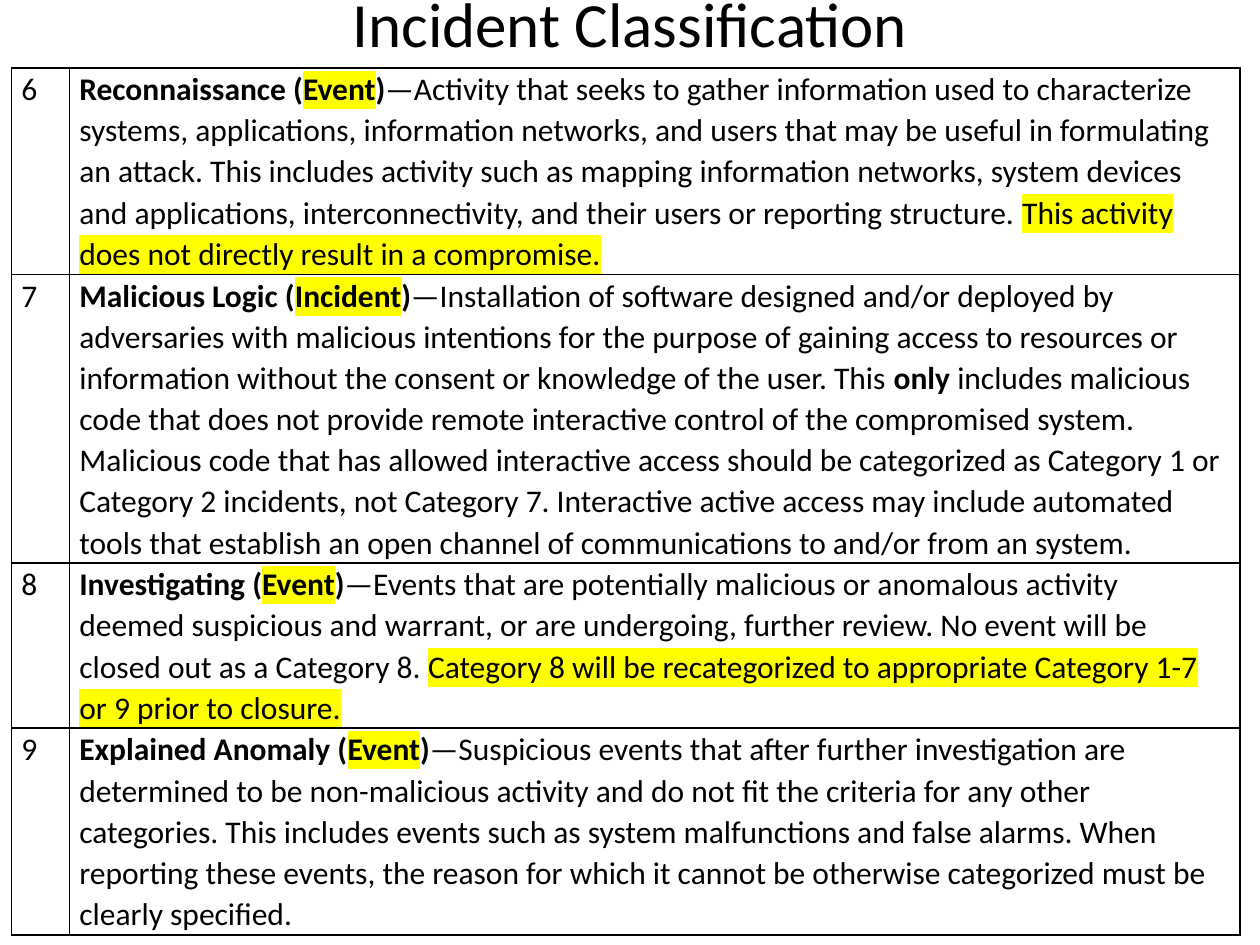
"""Build the incident classification slide."""
from dataclasses import dataclass
from typing import NamedTuple

from lxml import etree
from pptx import Presentation
from pptx import util as u
from pptx.dml.color import RGBColor
from pptx.enum import text
from pptx.oxml.ns import qn


@dataclass(frozen=True)
class Theme:
    """Colours, font and type sizes."""
    ink: str = "000000"
    paper: str = "FFFFFF"
    mark: str = "FFFF00"
    font: str = "Calibri"
    head: int = 36
    body: int = 18
    rule: int = 1


class Run(NamedTuple):
    """A stretch of text with one look."""
    text: str
    bold: bool = False
    mark: bool = False


class Entry(NamedTuple):
    """One category with its kind, its runs and its row height."""
    code: str
    name: str
    kind: str
    runs: list[Run]
    high: float


THEME = Theme()
COLS = (0.46, 9.29)
INSET = {"margin_left": u.Inches(0.08), "margin_right": u.Inches(0.08),
         "margin_top": 0, "margin_bottom": 0}
ENTRIES = [
    Entry("6", "Reconnaissance", "Event", [
        Run("—Activity that seeks to gather information used to characterize systems, "
            "applications, information networks, and users that may be useful in "
            "formulating an attack. This includes activity such as mapping information "
            "networks, system devices and applications, interconnectivity, and their "
            "users or reporting structure. "),
        Run("This activity does not directly result in a compromise.", mark=True)], 1.64),
    Entry("7", "Malicious Logic", "Incident", [
        Run("—Installation of software designed and/or deployed by adversaries with "
            "malicious intentions for the purpose of gaining access to resources or "
            "information without the consent or knowledge of the user. This "),
        Run("only ", bold=True),
        Run("includes malicious code that does not provide remote interactive control "
            "of the compromised system. Malicious code that has allowed interactive "
            "access should be categorized as Category 1 or Category 2 incidents, not "
            "Category 7. Interactive active access may include automated tools that "
            "establish an open channel of communications to and/or from an system.")], 2.29),
    Entry("8", "Investigating", "Event", [
        Run("—Events that are potentially malicious or anomalous activity deemed "
            "suspicious and warrant, or are undergoing, further review. No event will "
            "be closed out as a Category 8. "),
        Run("Category 8 will be recategorized to appropriate Category 1-7 or 9 prior "
            "to closure.", mark=True)], 1.31),
    Entry("9", "Explained Anomaly", "Event", [
        Run("—Suspicious events that after further investigation are determined to be "
            "non-malicious activity and do not fit the criteria for any other "
            "categories. This includes events such as system malfunctions and false "
            "alarms. When reporting these events, the reason for which it cannot be "
            "otherwise categorized must be clearly specified.")], 1.64),
]


def assign(obj, vals: dict) -> None:
    """Set each named attribute."""
    for key, val in vals.items():
        setattr(obj, key, val)


def tint(parent, hue: str) -> None:
    """Append a plain colour to an XML element."""
    etree.SubElement(parent, qn("a:srgbClr"), val=hue)


def write(para, runs: list[Run], size: int) -> None:
    """Write runs into a paragraph."""
    for item in runs:
        run = para.add_run()
        run.text = item.text
        run.font.color.rgb = RGBColor.from_string(THEME.ink)
        if item.mark:
            glow = etree.Element(qn("a:highlight"))
            tint(glow, THEME.mark)
            run.font._element.find(qn("a:solidFill")).addnext(glow)
        assign(run.font, {"name": THEME.font, "size": u.Pt(size), "bold": item.bold})


def edge(cell) -> None:
    """Rule all four sides of a cell."""
    props = cell._tc.get_or_add_tcPr()
    for spot, side in enumerate("LRTB"):
        line = etree.Element(qn(f"a:ln{side}"), w=str(u.Pt(THEME.rule)))
        tint(etree.SubElement(line, qn("a:solidFill")), THEME.ink)
        props.insert(spot, line)


def fill(cell, runs: list[Run]) -> None:
    """Format a table cell and write its text."""
    assign(cell, INSET)
    cell.fill.solid()
    cell.fill.fore_color.rgb = RGBColor.from_string(THEME.paper)
    edge(cell)
    para = cell.text_frame.paragraphs[0]
    para.line_spacing = 1.07
    write(para, runs, THEME.body)


def title(slide, words: str) -> None:
    """Add the centred heading."""
    box = slide.shapes.add_textbox(*map(u.Inches, (0.5, -0.45, 9, 1.25)))
    frame = box.text_frame
    assign(frame, {"word_wrap": True, "vertical_anchor": text.MSO_ANCHOR.MIDDLE})
    para = frame.paragraphs[0]
    para.alignment = text.PP_ALIGN.CENTER
    write(para, [Run(words)], THEME.head)


def grid(slide, entries: list[Entry]) -> None:
    """Add the table of categories."""
    high = sum(item.high for item in entries)
    place = map(u.Inches, (0.09, 0.54, sum(COLS), high))
    table = slide.shapes.add_table(len(entries), len(COLS), *place).table
    assign(table, {"first_row": False, "horz_banding": False})
    for col, wide in zip(table.columns, COLS):
        col.width = u.Inches(wide)
    for row, item in zip(table.rows, entries):
        row.height = u.Inches(item.high)
        lead = [Run(f"{item.name} (", True), Run(item.kind, True, True), Run(")", True)]
        fill(row.cells[0], [Run(item.code)])
        fill(row.cells[1], lead + item.runs)


def main() -> None:
    """Build and save the slide."""
    deck = Presentation()
    assign(deck, {"slide_width": u.Inches(10), "slide_height": u.Inches(7.5)})
    slide = deck.slides.add_slide(deck.slide_layouts[6])
    title(slide, "Incident Classification")
    grid(slide, ENTRIES)
    deck.save("out.pptx")


if __name__ == "__main__":
    main()
